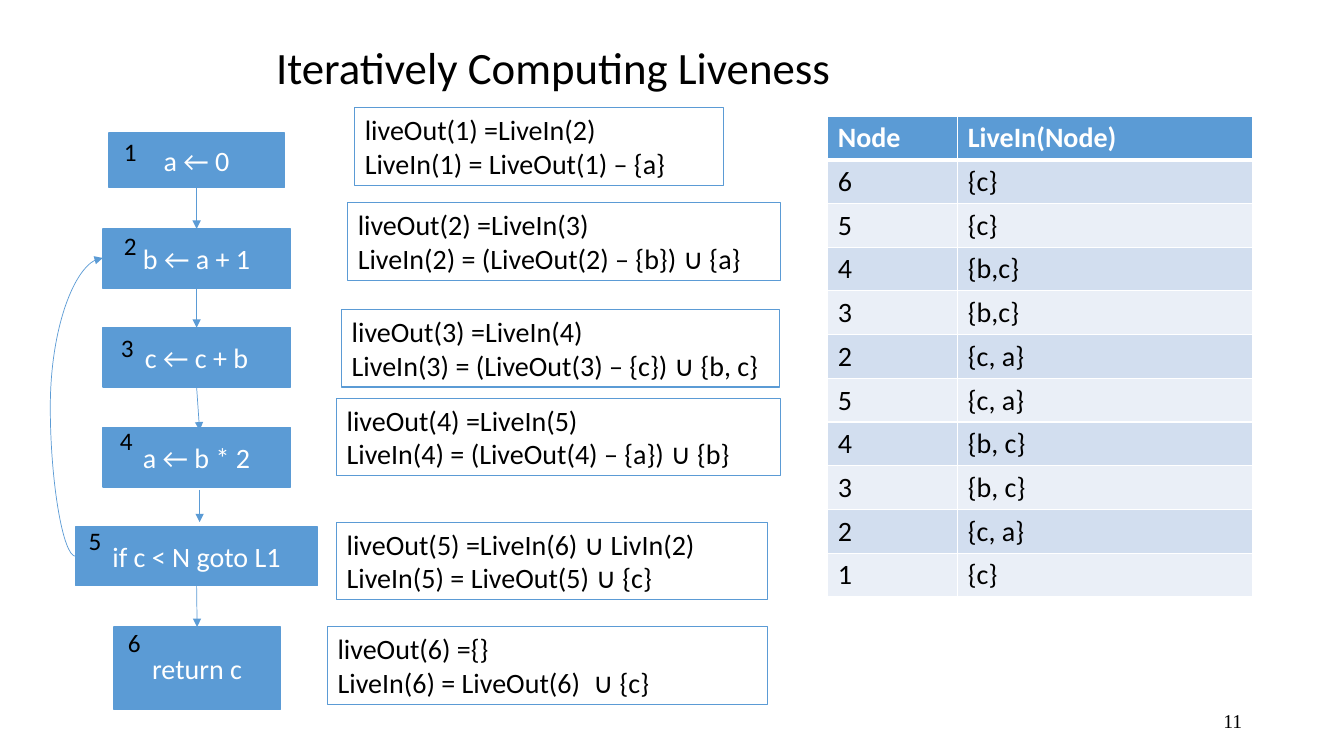
import pptx
import pptx.dml.color
import pptx.enum.shapes
import pptx.enum.text
import pptx.oxml
import pptx.oxml.ns
import pptx.util
from pptx.util import Inches

BLUE, WHITE, BLACK = "5B9BD5", "FFFFFF", "000000"
BANDS = ["D2DEEF", "EAEFF7"]
ANCHOR = pptx.enum.text.MSO_ANCHOR
ALIGN = pptx.enum.text.PP_ALIGN
CONNECTOR = pptx.enum.shapes.MSO_CONNECTOR
TOP, BOTTOM = 0, 2

# Statement of each node with its left, top, width and height
NODES = [
    ("a ← 0", 1.08, 1.32, 1.74, 0.54),
    ("b ← a + 1", 1.02, 2.27, 1.86, 0.59),
    ("c ← c + b", 1.02, 3.25, 1.86, 0.59),
    ("a ← b * 2", 1.02, 4.24, 1.86, 0.59),
    ("if c < N goto L1", 0.75, 5.23, 2.4, 0.58),
    ("return c", 1.13, 6.22, 1.65, 0.82),
]
NUMBER_POSITIONS = [(1.13, 1.3), (1.13, 2.24), (1.1, 3.25),
                    (1.09, 4.17), (0.78, 5.16), (1.17, 6.17)]
# Start and end of each arrow, and whether each end joins its node
ARROWS = [
    ((1.95, 1.86), (1.95, 2.27), True, True),
    ((1.95, 2.86), (1.95, 3.25), True, True),
    ((1.95, 3.84), (1.98, 4.27), True, False),
    ((1.98, 4.86), (1.98, 5.18), False, False),
    ((1.95, 5.81), (1.95, 6.22), True, True),
]
# Left, top and width of each equation box with its two lines
EQUATIONS = [
    (3.52, 1.07, 3.66, "liveOut(1) =LiveIn(2)\nLiveIn(1) = LiveOut(1) – {a}"),
    (3.45, 2.01, 4.29, "liveOut(2) =LiveIn(3)\nLiveIn(2) = (LiveOut(2) – {b}) ∪ {a}"),
    (3.39, 3.07, 4.34, "liveOut(3) =LiveIn(4)\nLiveIn(3) = (LiveOut(3) – {c}) ∪ {b, c}"),
    (3.34, 3.95, 4.4, "liveOut(4) =LiveIn(5)\nLiveIn(4) = (LiveOut(4) – {a}) ∪ {b}"),
    (3.34, 5.18, 4.27, "liveOut(5) =LiveIn(6) ∪ LivIn(2)\nLiveIn(5) = LiveOut(5) ∪ {c}"),
    (3.25, 6.22, 4.36, "liveOut(6) ={}\nLiveIn(6) = LiveOut(6)  ∪ {c}"),
]
LIVENESS = [
    ("Node", "LiveIn(Node)"),
    ("6", "{c}"), ("5", "{c}"), ("4", "{b,c}"), ("3", "{b,c}"), ("2", "{c, a}"),
    ("5", "{c, a}"), ("4", "{b, c}"), ("3", "{b, c}"), ("2", "{c, a}"), ("1", "{c}"),
]


def color(value):
    return pptx.dml.color.RGBColor.from_string(value)


def xml(tag, attributes="", inner=""):
    """Build one DrawingML element."""
    namespace = pptx.oxml.ns.nsdecls("a")
    return pptx.oxml.parse_xml(f"<a:{tag} {namespace} {attributes}>{inner}</a:{tag}>")


def write(frame, text, size, ink=BLACK, font="Calibri", align=ALIGN.LEFT, bold=False):
    frame.text = text
    for para in frame.paragraphs:
        para.alignment = align
        for span in para.runs:
            span.font.size = pptx.util.Pt(size)
            span.font.name = font
            span.font.bold = bold
            span.font.color.rgb = color(ink)


def add_text(slide, place, text, size, anchor=ANCHOR.TOP, **style):
    box = slide.shapes.add_textbox(*map(Inches, place))
    box.text_frame.word_wrap = True
    box.text_frame.vertical_anchor = anchor
    write(box.text_frame, text, size, **style)
    return box


def add_node(slide, text, *place):
    kind = pptx.enum.shapes.MSO_SHAPE.RECTANGLE
    node = slide.shapes.add_shape(kind, *map(Inches, place))
    node.shadow.inherit = False
    node.fill.solid()
    node.fill.fore_color.rgb = color(BLUE)
    node.line.color.rgb = color(BLUE)
    node.line.width = pptx.util.Pt(1)
    node.text_frame.vertical_anchor = ANCHOR.MIDDLE
    write(node.text_frame, text, 20, WHITE, align=ALIGN.CENTER)
    return node


def add_equations(slide, left, top, width, text):
    box = add_text(slide, (left, top, width, 0.77), text, 20)
    box.line.color.rgb = color(BLUE)
    box.line.width = pptx.util.Pt(0.75)


def add_arrow(slide, start, end, kind=CONNECTOR.STRAIGHT):
    arrow = slide.shapes.add_connector(kind, *map(Inches, start + end))
    arrow.line.color.rgb = color(BLUE)
    arrow.line.width = pptx.util.Pt(0.5)
    arrow.line._get_or_add_ln().append(xml("tailEnd", 'type="triangle"'))
    arrow._element.spPr.append(xml("effectLst"))
    return arrow


def add_flow(slide):
    nodes = [add_node(slide, *node) for node in NODES]
    for (start, end, joins_start, joins_end), upper, lower in zip(ARROWS, nodes, nodes[1:]):
        arrow = add_arrow(slide, start, end)
        if joins_start:
            arrow.begin_connect(upper, BOTTOM)
        if joins_end:
            arrow.end_connect(lower, TOP)

    loop = add_arrow(slide, (0.75, 5.52), (1.02, 2.56), CONNECTOR.CURVE)
    guides = loop._element.spPr.find(pptx.oxml.ns.qn("a:prstGeom")).get_or_add_avLst()
    guides.append(xml("gd", 'name="adj1" fmla="val -92900"'))

    for number, position in enumerate(NUMBER_POSITIONS, 1):
        add_text(slide, position + (0.23, 0.4), str(number), 18)


def set_borders(cell, top, bottom):
    """Give a cell white borders; top and bottom are widths in points."""
    properties = cell._tc.get_or_add_tcPr()
    fill = f'<a:solidFill><a:srgbClr val="{WHITE}"/></a:solidFill>'
    sides = [("lnL", 1), ("lnR", 1), ("lnT", top), ("lnB", bottom)]
    for index, (side, width) in enumerate(sides):
        properties.insert(index, xml(side, f'w="{pptx.util.Pt(width)}"', fill))


def add_liveness_table(slide):
    place = map(Inches, (8.21, 1.15, 4.21, 4.77))
    table = slide.shapes.add_table(len(LIVENESS), 2, *place).table
    for column, width in zip(table.columns, (1.29, 2.92)):
        column.width = Inches(width)
    for row, values in enumerate(LIVENESS):
        header = row == 0
        for column, value in enumerate(values):
            cell = table.cell(row, column)
            write(cell.text_frame, value, 20, WHITE if header else BLACK, bold=header)
            cell.fill.solid()
            cell.fill.fore_color.rgb = color(BLUE if header else BANDS[(row - 1) % 2])
            set_borders(cell, 3 if row == 1 else 1, 3 if header else 1)


def main():
    deck = pptx.Presentation()
    deck.slide_width, deck.slide_height = Inches(13.33), Inches(7.5)
    slide = deck.slides.add_slide(deck.slide_layouts[6])

    title = add_text(slide, (2.64, 0.07, 8.5, 1.25), "Iteratively Computing Liveness",
                     32, ANCHOR.MIDDLE)
    title.text_frame.paragraphs[0].line_spacing = 0.9
    add_text(slide, (9.42, 6.95, 3, 0.4), "11", 14, ANCHOR.MIDDLE,
             font="Times New Roman", align=ALIGN.RIGHT)
    add_flow(slide)
    for equations in EQUATIONS:
        add_equations(slide, *equations)
    add_liveness_table(slide)
    deck.save("out.pptx")


if __name__ == "__main__":
    main()
